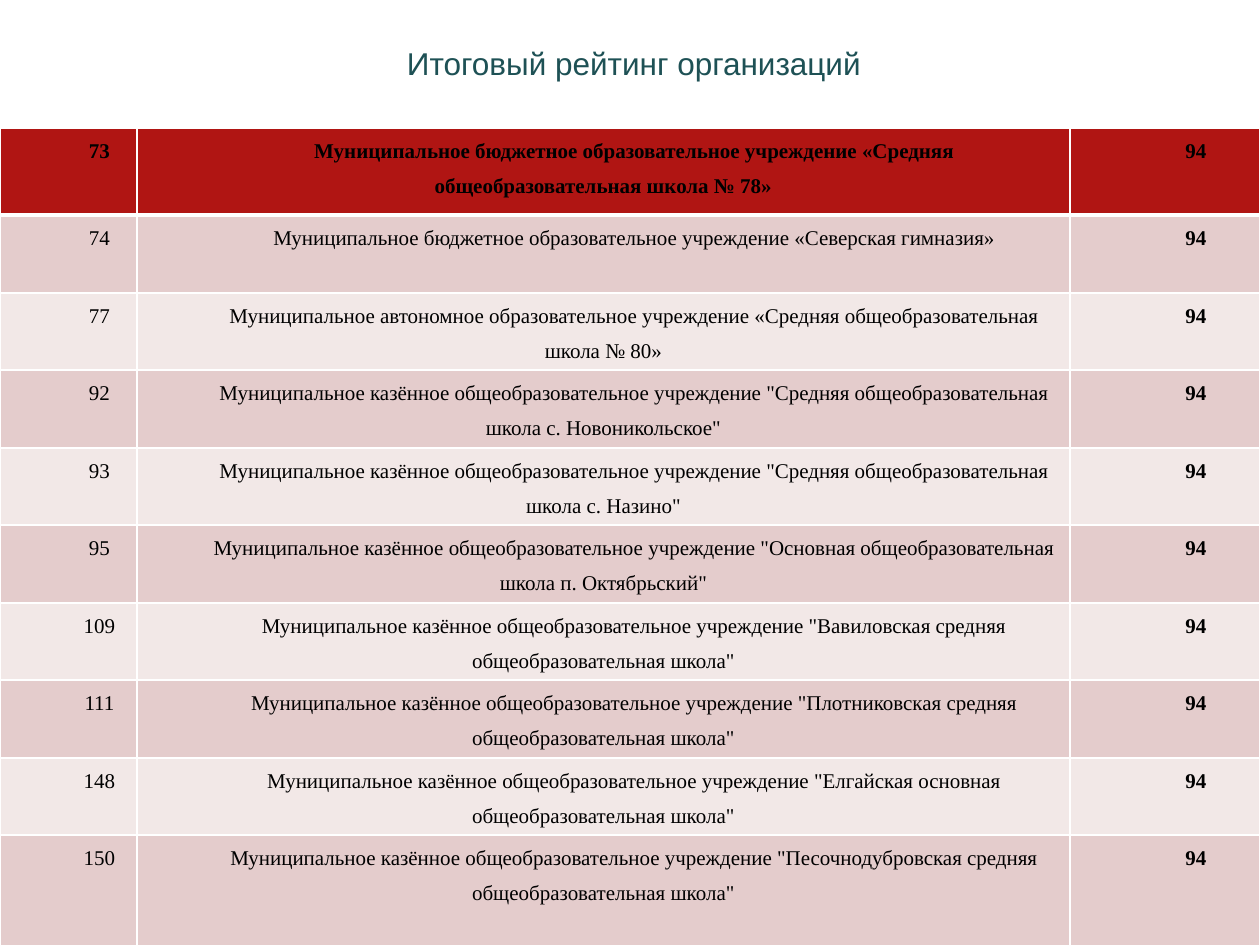
from dataclasses import dataclass

from lxml.etree import SubElement
from pptx import Presentation
from pptx.dml.color import RGBColor
from pptx.enum.text import MSO_ANCHOR as Anchor, PP_ALIGN as Align
from pptx.oxml.ns import qn
from pptx.slide import Slide
from pptx.table import _Cell as Cell
from pptx.text.text import _Paragraph as Paragraph
from pptx.util import Emu, Pt

EMU_PER_PX = 914400 / 126


def px(length: int) -> Emu:
    return Emu(round(length * EMU_PER_PX))


@dataclass(frozen=True)
class Theme:
    title_font: str = "Arial"
    table_font: str = "Times New Roman"
    title_size: int = 18
    table_size: int = 12
    title: str = "1E5155"
    ink: str = "000000"
    header: str = "B01513"
    bands: tuple[str, str] = ("E4CCCC", "F2E8E7")
    rule: str = "FFFFFF"
    thin: int = 1
    thick: int = 3


@dataclass(frozen=True)
class Rating:
    place: int
    school: str
    score: int = 94


THEME = Theme()
BUDGET = "Муниципальное бюджетное образовательное учреждение"
AUTONOMOUS = "Муниципальное автономное образовательное учреждение"
STATE = "Муниципальное казённое общеобразовательное учреждение"

RATINGS = [
    Rating(73, f"{BUDGET} «Средняя общеобразовательная школа № 78»"),
    Rating(74, f"{BUDGET} «Северская гимназия»"),
    Rating(77, f"{AUTONOMOUS} «Средняя общеобразовательная школа № 80»"),
    Rating(92, f'{STATE} "Средняя общеобразовательная школа с. Новоникольское"'),
    Rating(93, f'{STATE} "Средняя общеобразовательная школа с. Назино"'),
    Rating(95, f'{STATE} "Основная общеобразовательная школа п. Октябрьский"'),
    Rating(109, f'{STATE} "Вавиловская средняя общеобразовательная школа"'),
    Rating(111, f'{STATE} "Плотниковская средняя общеобразовательная школа"'),
    Rating(148, f'{STATE} "Елгайская основная общеобразовательная школа"'),
    Rating(150, f'{STATE} "Песочнодубровская средняя общеобразовательная школа"'),
]

TABLE_TOP = 128
COLUMNS = (137, 933, 190)
# Middle rows alternate 78 and 77 px; the first and last are taller
ROWS = (87, *(78 - i % 2 for i in range(len(RATINGS) - 2)), 130)


def add_run(paragraph: Paragraph, text: str, font: str, size: int,
            color: str, bold: bool = False) -> None:
    run = paragraph.add_run()
    run.text = text
    run.font.name = font
    run.font.size = Pt(size)
    run.font.bold = bold
    run.font.color.rgb = RGBColor.from_string(color)


def add_title(slide: Slide, text: str) -> None:
    frame = slide.shapes.add_textbox(px(67), px(38), px(1134), px(50)).text_frame
    frame.word_wrap = True
    frame.vertical_anchor = Anchor.MIDDLE
    heading = frame.paragraphs[0]
    heading.alignment = Align.CENTER
    add_run(heading, text, THEME.title_font, THEME.title_size, THEME.title)


def set_borders(cell: Cell, top: int, bottom: int) -> None:
    properties = cell._tc.get_or_add_tcPr()
    widths = {"L": THEME.thin, "R": THEME.thin, "T": top, "B": bottom}
    for side, width in widths.items():
        line = SubElement(properties, qn(f"a:ln{side}"), w=str(Pt(width)))
        fill = SubElement(line, qn("a:solidFill"))
        SubElement(fill, qn("a:srgbClr"), val=THEME.rule)


def fill_cell(cell: Cell, text: str, row: int, bold: bool) -> None:
    # Only the rule under the first row is thick
    set_borders(cell,
                top=THEME.thick if row == 1 else THEME.thin,
                bottom=THEME.thick if row == 0 else THEME.thin)
    cell.fill.solid()
    background = THEME.bands[(row - 1) % 2] if row else THEME.header
    cell.fill.fore_color.rgb = RGBColor.from_string(background)
    cell.margin_left = cell.margin_right = px(9)
    cell.margin_top = cell.margin_bottom = 0
    entry = cell.text_frame.paragraphs[0]
    entry.alignment = Align.CENTER
    entry.line_spacing = 1.5
    entry._p.get_or_add_pPr().set("indent", str(px(62)))
    add_run(entry, text, THEME.table_font, THEME.table_size, THEME.ink, bold)


def add_rating_table(slide: Slide, ratings: list[Rating]) -> None:
    table = slide.shapes.add_table(
        len(ratings), len(COLUMNS), 0, px(TABLE_TOP),
        px(sum(COLUMNS)), px(sum(ROWS))).table
    for column, width in zip(table.columns, COLUMNS):
        column.width = px(width)
    for row, (rating, height) in enumerate(zip(ratings, ROWS)):
        table.rows[row].height = px(height)
        values = (rating.place, rating.school, rating.score)
        for column, value in enumerate(values):
            # The first row and the score column are bold
            bold = row == 0 or column == len(COLUMNS) - 1
            fill_cell(table.cell(row, column), str(value), row, bold)


def main() -> None:
    deck = Presentation()
    deck.slide_width, deck.slide_height = px(1260), px(945)
    slide = deck.slides.add_slide(deck.slide_layouts[6])
    add_title(slide, "Итоговый рейтинг организаций")
    add_rating_table(slide, RATINGS)
    deck.save("out.pptx")


if __name__ == "__main__":
    main()
